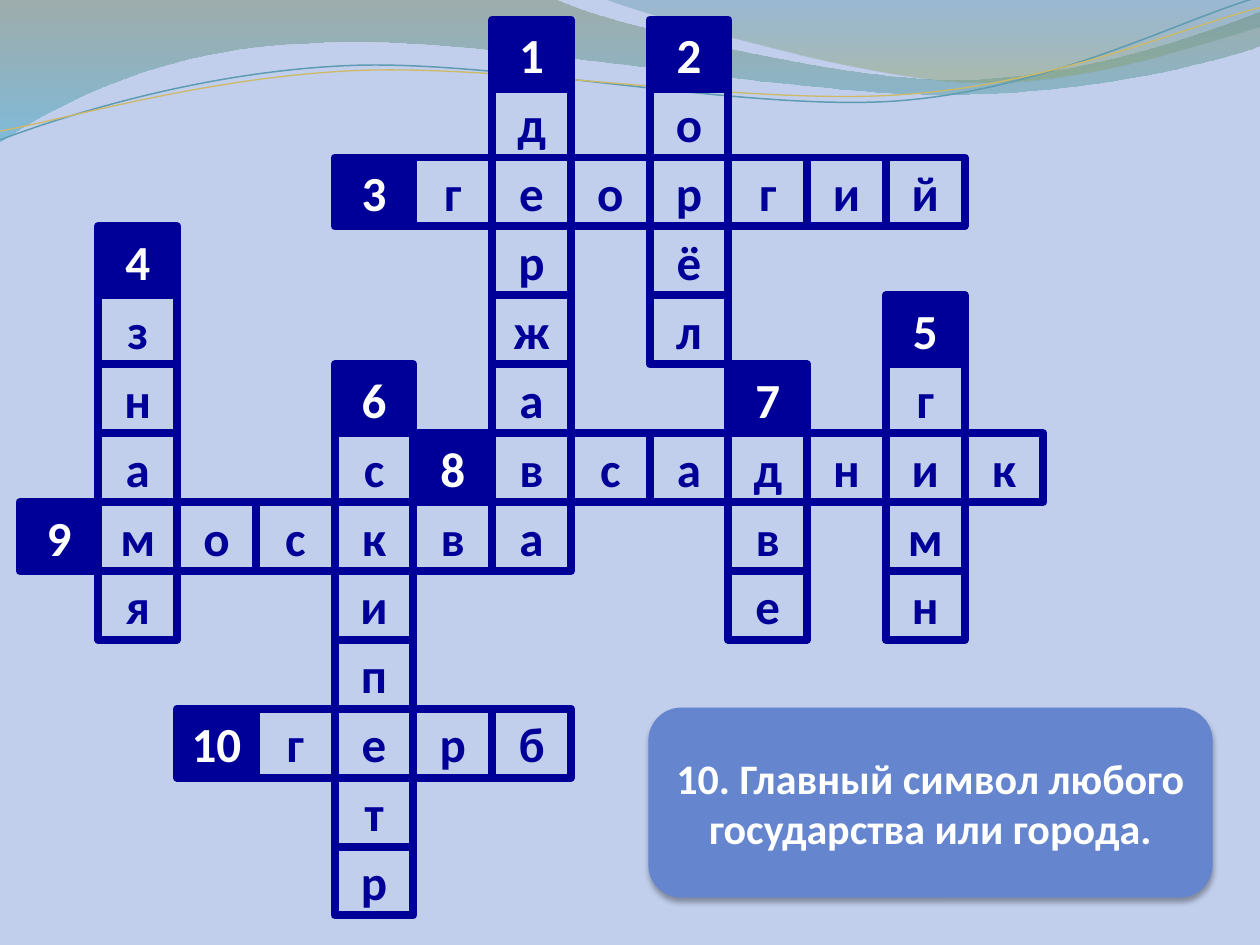
from math import cos, radians, sin

from pptx import Presentation, util as u
from pptx.dml.color import RGBColor
from pptx.enum import shapes as sh, text as tx
from pptx.oxml import parse_xml
from pptx.oxml.ns import nsdecls

COLORS = {"back": "C1CEEC", "navy": "000099", "white": "FFFFFF", "clue": "6585CF",
          "teal": "5E9CB1", "gold": "CEB966"}
FONT = "Calibri"

# number, answer, column and row of the number cell, step (across, down)
ACROSS, DOWN = (1, 0), (0, 1)
WORDS = [
    ("1", "держава", 6, 0, DOWN),
    ("2", "орёл", 8, 0, DOWN),
    ("3", "георгий", 4, 2, ACROSS),
    ("4", "знамя", 1, 3, DOWN),
    ("5", "гимн", 11, 4, DOWN),
    ("6", "скипетр", 4, 5, DOWN),
    ("7", "две", 9, 5, DOWN),
    ("8", "всадник", 5, 6, ACROSS),
    ("9", "москва", 0, 7, ACROSS),
    ("10", "герб", 2, 10, ACROSS),
]
WIDE, HIGH = 5 / 8, 35 / 64
EDGE = WIDE / 4
CLUE = "10. Главный символ любого государства или города."

# A step of one point is a line, a step of three points is a Bezier curve
# Gradient stops: position, colour, opacity in percent
BANDS = [
    ([[(0, 0)], [(4.4, -0.01)],
      [(4.76, 0.17), (6.64, 0.63), (7.58, 0.63)],
      [(8.53, 0.63), (9.58, 0.26), (10, 0.09)], [(10.01, 0.36)],
      [(9.83, 0.44), (8.7, 0.76), (7.46, 0.75)],
      [(6.22, 0.75), (3.82, 0.28), (2.57, 0.34)],
      [(1.29, 0.36), (0.46, 0.83), (-0.01, 1.13)]],
     [(0, "74855E", 45), (1, "4AACCE", 55)]),
    ([[(4.79, -0.01)],
      [(5.09, 0.11), (6.82, 0.62), (7.69, 0.65)],
      [(8.56, 0.69), (9.61, 0.32), (10, 0.21)], [(10, 0)]],
     [(0, "45889F", 30), (0.8, "8AA36D", 45)]),
]
# Steps as they lie after the turn, middle of the turn, colour, width
TURN = -2.7
WAVES = [
    ([[(0, 1.11)],
      [(0.48, 0.93), (1.58, 0.57), (2.77, 0.52)],
      [(3.95, 0.47), (5.93, 0.89), (7.13, 0.8)],
      [(8.33, 0.71), (9.38, 0.15), (9.98, -0.02)]], (4.99, 0.575), "teal", 0.85),
    ([[(0, 1.04)],
      [(0.47, 0.96), (1.64, 0.61), (2.83, 0.56)],
      [(4.03, 0.51), (5.97, 0.84), (7.17, 0.75)],
      [(8.36, 0.67), (9.41, 0.21), (10, 0.06)]], (4.995, 0.59), "gold", 0.75),
]


def rgb(name):
    return RGBColor.from_string(COLORS.get(name, name))


def outline(slide, steps, close):
    """Draw the points as a freeform, then join each three into a curve."""
    points = [(u.Inches(x), u.Inches(y)) for step in steps for x, y in step]
    pen = slide.shapes.build_freeform(*points[0])
    pen.add_line_segments(points[1:], close=close)
    shape = pen.convert_to_shape()
    shape.shadow.inherit = False
    lines = iter(shape._element.spPr.xpath(".//a:lnTo"))
    for step in steps[1:]:
        group = [next(lines) for point in step]
        if len(group) == 3:
            curve = parse_xml(f'<a:cubicBezTo {nsdecls("a")}/>')
            group[0].addprevious(curve)
            for line in group:
                curve.append(line[0])
                line.getparent().remove(line)
    return shape


def turned(steps, mid, angle):
    c, s = cos(radians(angle)), sin(radians(angle))
    mx, my = mid
    return [[(mx + (x - mx) * c - (y - my) * s, my + (x - mx) * s + (y - my) * c)
             for x, y in step] for step in steps]


def add_band(slide, steps, stops):
    shape = outline(slide, steps, True)
    shape.line.fill.background()
    shape.fill.gradient()
    shape.fill.gradient_angle = 270
    for stop, (pos, color, alpha) in zip(shape.fill.gradient_stops, stops):
        stop.position = pos
        stop.color.rgb = rgb(color)
    tints = shape._element.spPr.xpath("a:gradFill//a:srgbClr")
    for tint, (pos, color, alpha) in zip(tints, stops):
        tint.append(parse_xml(f'<a:alpha {nsdecls("a")} val="{alpha * 1000}"/>'))


def add_wave(slide, steps, mid, color, width):
    shape = outline(slide, turned(steps, mid, -TURN), False)
    shape.rotation = TURN
    shape.fill.background()
    shape.line.color.rgb = rgb(color)
    shape.line.width = u.Pt(width)


def add_box(slide, kind, at, words, size, ink, fill, edge, width):
    shape = slide.shapes.add_shape(kind, *map(u.Inches, at))
    shape.shadow.inherit = False
    if fill:
        shape.fill.solid()
        shape.fill.fore_color.rgb = rgb(fill)
    else:
        shape.fill.background()
    shape.line.color.rgb = rgb(edge)
    shape.line.width = u.Pt(width)
    frame = shape.text_frame
    frame.text = words
    frame.word_wrap = True
    frame.vertical_anchor = tx.MSO_ANCHOR.MIDDLE
    par = frame.paragraphs[0]
    par.alignment = tx.PP_ALIGN.CENTER
    font = par.runs[0].font
    font.name, font.size, font.bold = FONT, u.Pt(size), True
    font.color.rgb = rgb(ink)
    return shape


def add_grid(slide):
    cells = {}
    for number, answer, col, row, (dx, dy) in WORDS:
        for i, sign in enumerate([number, *answer]):
            cells[col + i * dx, row + i * dy] = sign
    for (col, row), sign in cells.items():
        at = (EDGE + col * WIDE, EDGE + row * HIGH, WIDE, HIGH)
        ink, fill = ("white", "navy") if sign.isdigit() else ("navy", None)
        box = add_box(slide, sh.MSO_SHAPE.RECTANGLE, at, sign, 28, ink, fill,
                      "navy", 4.5)
        box.text_frame.margin_left = box.text_frame.margin_right = 0


def add_clue(slide):
    box = add_box(slide, sh.MSO_SHAPE.ROUNDED_RECTANGLE, (5.16, 5.63, 4.45, 1.48),
                  CLUE, 24, "white", "clue", "clue", 2)
    effects = box._element.spPr.xpath("a:effectLst")[0]
    effects.append(parse_xml(
        f'<a:outerShdw {nsdecls("a")} blurRad="{u.Pt(3.5)}" dist="{u.Pt(2.2)}" '
        'dir="5400000" rotWithShape="0"><a:srgbClr val="000000">'
        '<a:alpha val="32000"/></a:srgbClr></a:outerShdw>'))


def main():
    deck = Presentation()
    deck.slide_width, deck.slide_height = u.Inches(10), u.Inches(7.5)
    slide = deck.slides.add_slide(deck.slide_layouts[6])
    slide.background.fill.solid()
    slide.background.fill.fore_color.rgb = rgb("back")
    for band in BANDS:
        add_band(slide, *band)
    for wave in WAVES:
        add_wave(slide, *wave)
    add_grid(slide)
    add_clue(slide)
    deck.save("out.pptx")


if __name__ == "__main__":
    main()
